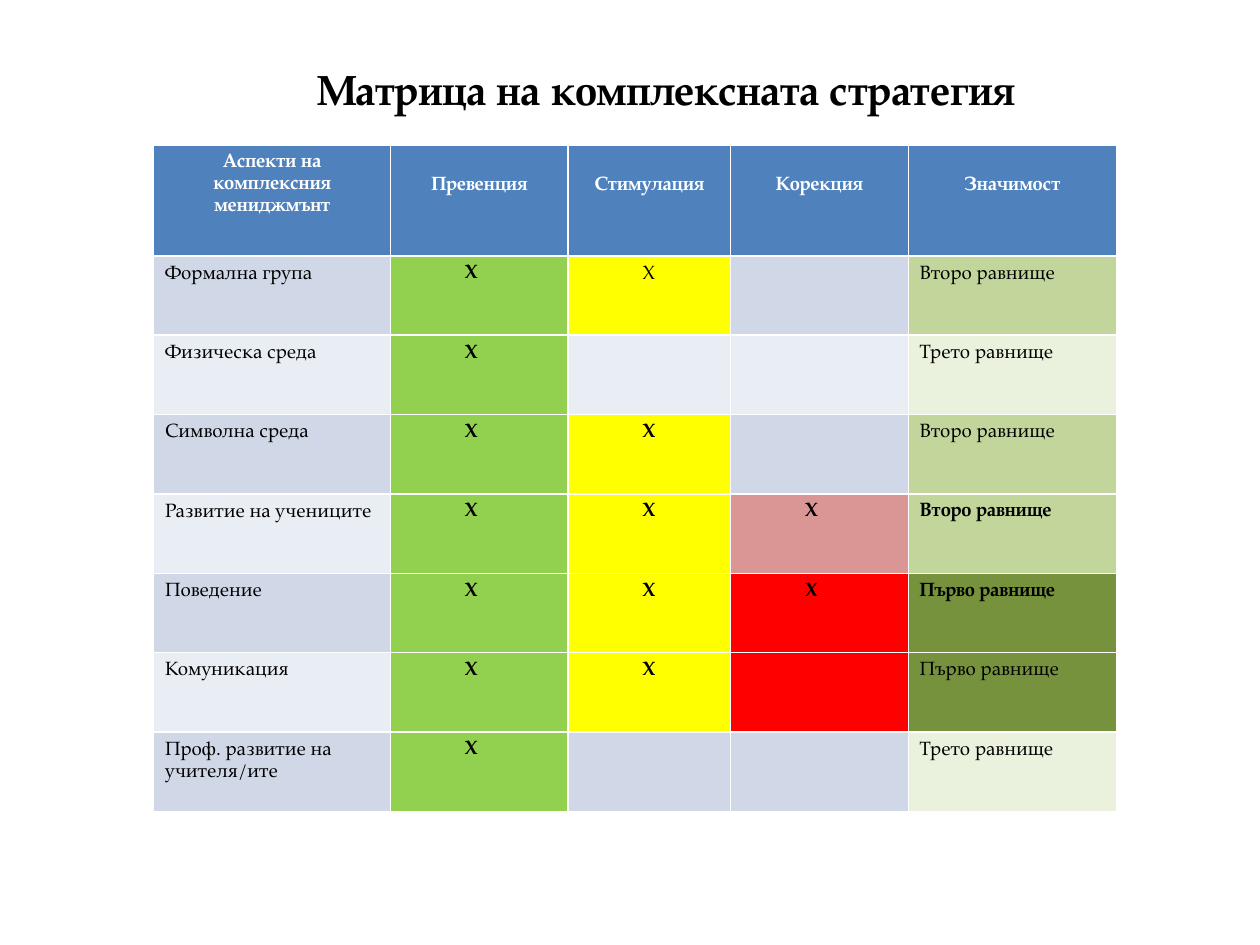
from dataclasses import dataclass

from pptx import Presentation
from pptx.dml.color import RGBColor
from pptx.enum.text import MSO_ANCHOR as Anchor, MSO_AUTO_SIZE as AutoSize, PP_ALIGN as Align
from pptx.util import Inches, Pt


@dataclass(frozen=True)
class Theme:
    font: str = "TeX Gyre Pagella"
    title_size: int = 24
    table_size: int = 11
    ink: str = "000000"
    header_ink: str = "FFFFFF"
    header: str = "4F81BD"
    bands: tuple = ("D0D8E8", "E9EDF4")
    prevention: str = "92D050"
    stimulation: str = "FFFF00"
    light_correction: str = "D99694"
    correction: str = "FF0000"
    first_level: str = "76923C"
    second_level: str = "C2D69B"
    third_level: str = "EAF1DD"


THEME = Theme()
LEVELS = {
    "Първо равнище": THEME.first_level,
    "Второ равнище": THEME.second_level,
    "Трето равнище": THEME.third_level,
}
HEADINGS = ["Аспекти на комплексния мениджмънт", "Превенция", "Стимулация",
            "Корекция", "Значимост"]

# Each measure is (mark, bold, fill); None leaves the row's band colour
PREVENT = ("Х", True, THEME.prevention)
STIMULATE = ("Х", True, THEME.stimulation)
WEAK_STIMULATE = ("Х", False, THEME.stimulation)
LIGHT_CORRECT = ("Х", True, THEME.light_correction)
CORRECT = ("Х", True, THEME.correction)
UNMARKED_CORRECT = ("", False, THEME.correction)

# Aspect, stimulation, correction, level, whether the level is bold
ASPECTS = [
    ("Формална група", WEAK_STIMULATE, None, "Второ равнище", False),
    ("Физическа среда", None, None, "Трето равнище", False),
    ("Символна среда", STIMULATE, None, "Второ равнище", False),
    ("Развитие на учениците", STIMULATE, LIGHT_CORRECT, "Второ равнище", True),
    ("Поведение", STIMULATE, CORRECT, "Първо равнище", True),
    ("Комуникация", STIMULATE, UNMARKED_CORRECT, "Първо равнище", False),
    ("Проф. развитие на учителя/ите", None, None, "Трето равнище", False),
]
COLUMN_WIDTHS = [1.88, 1.41, 1.29, 1.41, 1.65]
HEADER_HEIGHT, ROW_HEIGHT = 0.88, 0.63
FIRST_LINE_INDENT = Inches(0.5)


def write(paragraph, text, size, color, bold, align, indent=0):
    paragraph.alignment = align
    if indent:
        properties = paragraph._p.get_or_add_pPr()
        properties.set("marL", "0")
        properties.set("indent", str(indent))
    run = paragraph.add_run()
    run.text = text
    font = run.font
    font.name, font.size, font.bold = THEME.font, Pt(size), bold
    font.color.rgb = RGBColor.from_string(color)


def fill_cell(cell, text, fill, color=THEME.ink, bold=False, align=Align.JUSTIFY, indent=0):
    cell.fill.solid()
    cell.fill.fore_color.rgb = RGBColor.from_string(fill)
    cell.margin_left = cell.margin_right = Inches(0.09)
    cell.margin_top = cell.margin_bottom = Inches(0.05)
    if text:
        paragraph = cell.text_frame.paragraphs[0]
        paragraph.line_spacing = 1.15
        write(paragraph, text, THEME.table_size, color, bold, align, indent)


def place_title(slide, left, top, width, height):
    title = slide.shapes.title
    title.left, title.top, title.width, title.height = map(Inches, (left, top, width, height))
    frame = title.text_frame
    frame.word_wrap = True
    frame.auto_size = AutoSize.NONE
    frame.vertical_anchor = Anchor.TOP
    write(frame.paragraphs[0], "Матрица на комплексната стратегия", THEME.title_size,
          THEME.ink, True, Align.CENTER, FIRST_LINE_INDENT)


def place_matrix(slide, left, top):
    height = HEADER_HEIGHT + ROW_HEIGHT * len(ASPECTS)
    matrix = slide.shapes.add_table(
        len(ASPECTS) + 1, len(HEADINGS), Inches(left), Inches(top),
        Inches(sum(COLUMN_WIDTHS)), Inches(height)).table
    for column, width in zip(matrix.columns, COLUMN_WIDTHS):
        column.width = Inches(width)
    for number, row in enumerate(matrix.rows):
        row.height = Inches(ROW_HEIGHT if number else HEADER_HEIGHT)

    # Header: the one-line headings sit level with the middle of the first one
    for column, heading in enumerate(HEADINGS):
        cell = matrix.cell(0, column)
        fill_cell(cell, heading, THEME.header, THEME.header_ink, True, Align.CENTER)
        if column:
            cell.margin_top = Inches(0.23)

    # Aspects with their measures and level
    for number, (aspect, stimulation, correction, level, bold) in enumerate(ASPECTS):
        band = THEME.bands[number % 2]
        row = number + 1
        fill_cell(matrix.cell(row, 0), aspect, band, align=Align.LEFT)
        for column, measure in enumerate((PREVENT, stimulation, correction), start=1):
            mark, strong, fill = measure or ("", False, band)
            fill_cell(matrix.cell(row, column), mark, fill, bold=strong,
                      indent=FIRST_LINE_INDENT)
        fill_cell(matrix.cell(row, 4), level, LEVELS[level], bold=bold)


def main():
    deck = Presentation()
    deck.slide_width, deck.slide_height = Inches(10), Inches(7.5)
    slide = deck.slides.add_slide(deck.slide_layouts[5])
    place_matrix(slide, 1.22, 1.15)
    place_title(slide, 1.3, 0.45, 7.48, 0.81)
    deck.save("out.pptx")


if __name__ == "__main__":
    main()
